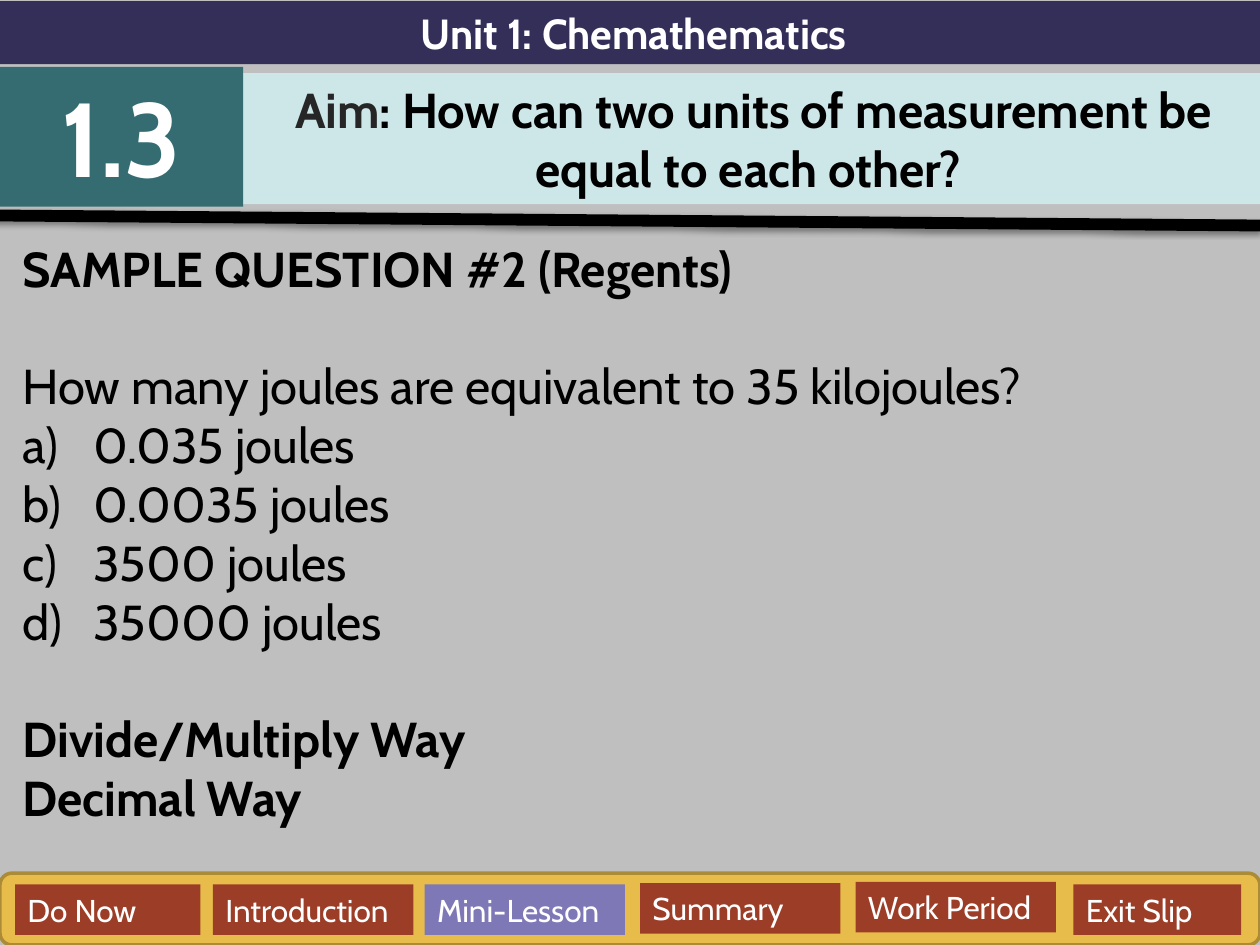
"""Build the sample question slide of a chemistry lesson on units."""
import pptx
import pptx.dml.color
import pptx.enum.shapes
import pptx.enum.text
import pptx.oxml
import pptx.oxml.ns
import pptx.util

Inches = pptx.util.Inches
Pt = pptx.util.Pt
SHAPE = pptx.enum.shapes.MSO_SHAPE
ALIGN = pptx.enum.text.PP_ALIGN

THEME = {
    "font": "Cabin", "back": "BFBFBF", "black": "000000", "white": "FFFFFF",
    "unit": "342F59", "number": "346C71", "aim": "CDE6E8", "label": "262626",
    "bar": "E8BC4A", "edge": "AC8B37", "tab": "9C3D28", "active": "7E78B7",
    "small": 18, "head": 24, "body": 28, "huge": 60, "gap": 33.6,
}

UNIT = "Unit 1: Chemathematics"
NUMBER = "1.3"
AIM = [("Aim", "label"), (": How can two units of measurement be equal to each other? ", "black")]
BODY = [
    ("SAMPLE QUESTION #2 (Regents)", "bold"),
    ("How many joules are equivalent to 35 kilojoules?", "gap"),
    ("0.035 joules", "choice"),
    ("0.0035 joules", "choice"),
    ("3500 joules", "choice"),
    ("35000 joules", "choice"),
    ("Divide/Multiply Way", "bold gap"),
    ("Decimal Way", "bold"),
]
TABS = [
    ("Do Now", 0.12, 7.02, 1.47),
    ("Introduction", 1.69, 7.02, 1.59),
    ("Mini-Lesson", 3.37, 7.02, 1.59),
    ("Summary", 5.08, 7.01, 1.59),
    ("Work Period", 6.79, 7, 1.59),
    ("Exit Slip", 8.52, 7.02, 1.33),
]
ACTIVE = "Mini-Lesson"


def color(name):
    return pptx.dml.color.RGBColor.from_string(THEME[name])


def style(run, size, ink, bold=False):
    font = run.font
    font.name, font.size, font.bold = THEME["font"], Pt(THEME[size]), bold
    font.color.rgb = color(ink)


def paint(shape, fill):
    shape.fill.solid()
    shape.fill.fore_color.rgb = color(fill)


def add_box(slide, box, fill, kind=SHAPE.RECTANGLE):
    shape = slide.shapes.add_shape(kind, *map(Inches, box))
    shape.shadow.inherit = False
    paint(shape, fill)
    shape.line.fill.background()
    return shape


def add_label(slide, text, box, fill, size, bold=True, align=ALIGN.CENTER):
    frame = add_box(slide, box, fill).text_frame
    frame.text = text
    frame.word_wrap = True
    frame.vertical_anchor = pptx.enum.text.MSO_ANCHOR.TOP
    frame.paragraphs[0].alignment = align
    style(frame.paragraphs[0].runs[0], size, "white", bold)


def add_aim(slide):
    title = slide.shapes.title
    title.left, title.top, title.width, title.height = map(Inches, (1.93, 0.58, 8.1, 1.04))
    paint(title, "aim")
    frame = title.text_frame
    frame.word_wrap = True
    frame.auto_size = pptx.enum.text.MSO_AUTO_SIZE.NONE
    frame.vertical_anchor = pptx.enum.text.MSO_ANCHOR.TOP
    para = frame.paragraphs[0]
    para.alignment = ALIGN.CENTER
    for text, ink in AIM:
        run = para.add_run()
        run.text = text
        style(run, "body", ink, True)


def add_rule(slide):
    ends = map(Inches, (-0.05, 1.71, 10, 1.79))
    rule = slide.shapes.add_connector(pptx.enum.shapes.MSO_CONNECTOR.STRAIGHT, *ends)
    rule.line.color.rgb = color("black")
    rule.line.width = Pt(6.75)
    rule._element.spPr.append(pptx.oxml.parse_xml(
        f'<a:effectLst {pptx.oxml.ns.nsdecls("a")}>'
        f'<a:outerShdw blurRad="{Pt(3.1)}" dist="{Pt(1.6)}" dir="5400000" rotWithShape="0">'
        f'<a:srgbClr val="{THEME["black"]}"><a:alpha val="38000"/></a:srgbClr>'
        '</a:outerShdw></a:effectLst>'))


def add_letter(para):
    props = para._p.get_or_add_pPr()
    props.set("marL", str(Inches(0.56)))
    props.set("indent", str(Inches(-0.56)))
    props.append(pptx.oxml.parse_xml(
        f'<a:buAutoNum {pptx.oxml.ns.nsdecls("a")} type="alphaLcParenR"/>'))


def add_body(slide):
    frame = slide.shapes.add_textbox(*map(Inches, (0.08, 1.84, 9.92, 4.81))).text_frame
    frame.word_wrap = True
    frame.text = "\n".join(text for text, _ in BODY)
    for para, (_, role) in zip(frame.paragraphs, BODY):
        style(para.runs[0], "body", "black", "bold" in role)
        if "gap" in role:
            para.space_before = Pt(THEME["gap"])
        if "choice" in role:
            add_letter(para)


def add_tabs(slide):
    bar = add_box(slide, (0, 6.93, 10, 0.57), "bar", SHAPE.ROUNDED_RECTANGLE)
    bar.line.color.rgb = color("edge")
    bar.line.width = Pt(2)
    for text, left, top, width in TABS:
        fill = "active" if text == ACTIVE else "tab"
        add_label(slide, text, (left, top, width, 0.4), fill, "small", False, ALIGN.LEFT)


def main():
    deck = pptx.Presentation()
    deck.slide_width, deck.slide_height = Inches(10), Inches(7.5)
    slide = deck.slides.add_slide(deck.slide_layouts.get_by_name("Title Only"))
    paint(slide.background, "back")
    add_label(slide, UNIT, (0, 0.01, 10.06, 0.5), "unit", "head")
    add_label(slide, NUMBER, (0, 0.53, 1.93, 1.11), "number", "huge")
    add_aim(slide)
    add_rule(slide)
    add_tabs(slide)
    add_body(slide)
    deck.save("out.pptx")


if __name__ == "__main__":
    main()
